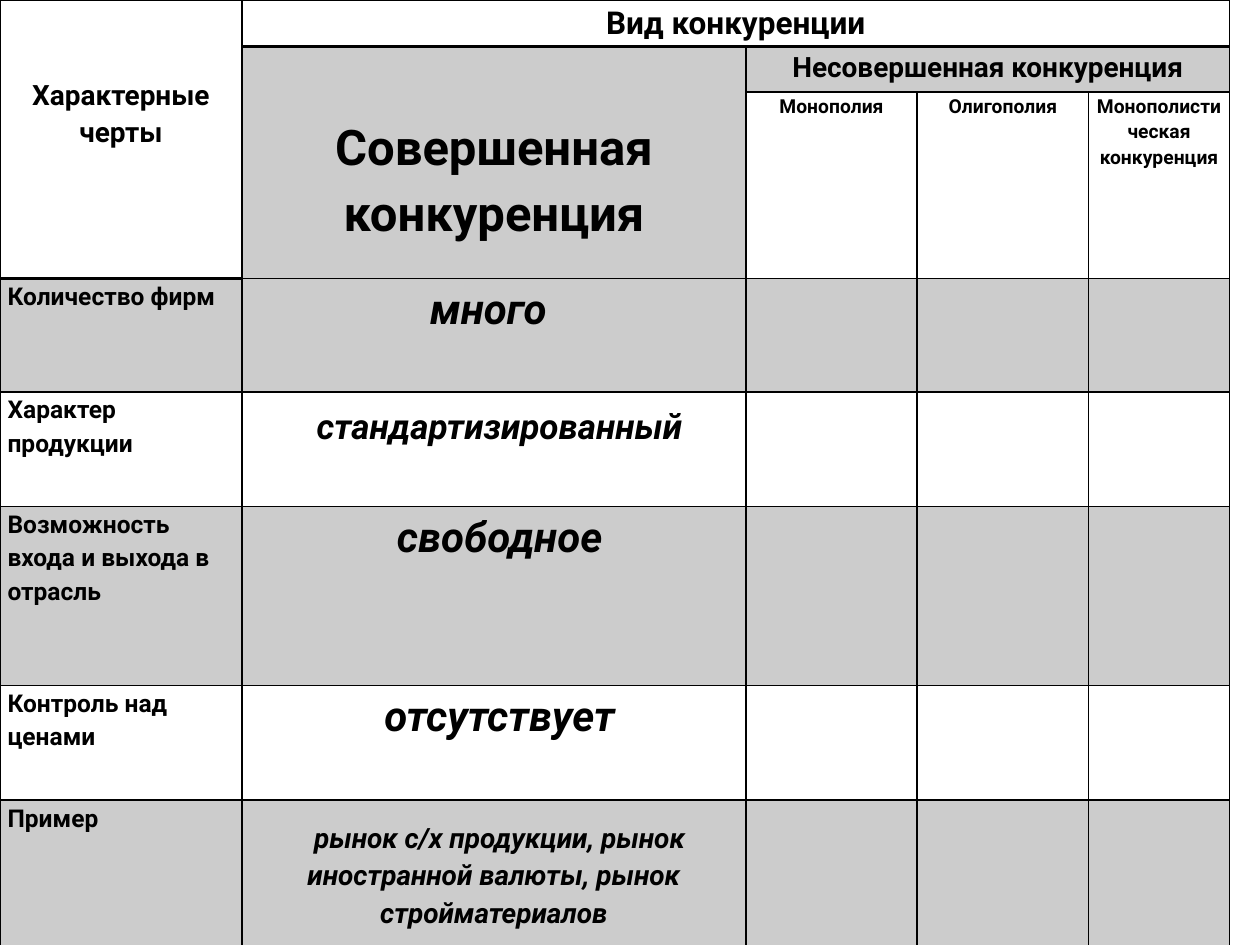
import pptx
import pptx.util
import pptx.dml.color
import pptx.enum.text
import pptx.oxml.ns
from dataclasses import dataclass
from lxml import etree
from pptx.util import Inches, Pt


@dataclass(frozen=True)
class Theme:
    font: str = "Roboto"
    ink: str = "000000"
    shade_alpha: int = 20
    huge: int = 28
    answer: int = 24
    medium: int = 20
    heading: int = 18
    subheading: int = 16
    label: int = 14
    small: int = 11


theme = Theme()
ink = pptx.dml.color.RGBColor.from_string(theme.ink)
align = pptx.enum.text.PP_ALIGN
qn = pptx.oxml.ns.qn


def write(cell, text, size, alignment, italic=False, top=0, offset=None):
    cell.margin_top = Inches(top)
    tf = cell.text_frame
    for i, line in enumerate(text.split("\n")):
        p = tf.paragraphs[0] if i == 0 else tf.add_paragraph()
        p.alignment = alignment
        p.line_spacing = 1.15
        if offset:
            p._p.get_or_add_pPr().set(offset, str(Inches(0.09)))
        r = p.add_run()
        r.text = line
        look = {"name": theme.font, "size": Pt(size), "bold": True, "italic": italic}
        for key, value in look.items():
            setattr(r.font, key, value)
        r.font.color.rgb = ink


def draw_borders(cell, bottom):
    tcPr = cell._tc.get_or_add_tcPr()
    widths = {"lnL": 1, "lnR": 1, "lnT": 1, "lnB": bottom}
    for i, (tag, width) in enumerate(widths.items()):
        ln = etree.Element(qn(f"a:{tag}"), w=str(Pt(width)))
        fill = etree.SubElement(ln, qn("a:solidFill"))
        etree.SubElement(fill, qn("a:srgbClr"), val=theme.ink)
        tcPr.insert(i, ln)


prs = pptx.Presentation()
prs.slide_width, prs.slide_height = Inches(10), Inches(7.5)
s = prs.slides.add_slide(prs.slide_layouts[6])

widths = [1.92, 4, 1.36, 1.36, 1.12]
heights = [0.37, 0.36, 1.48, 0.9, 0.91, 1.42, 0.91, 1.26]
table = s.shapes.add_table(len(heights), len(widths), 0, 0,
                           Inches(sum(widths)), Inches(sum(heights))).table
table.first_row = table.horz_banding = False
for column, width in zip(table.columns, widths):
    column.width = Inches(width)
for row, height in zip(table.rows, heights):
    row.height = Inches(height)

shaded = {(1, c) for c in range(1, 5)} | {(2, 1)}
shaded |= {(r, c) for r in (3, 5, 7) for c in range(5)}
thick = {(0, c) for c in range(5)} | {(2, 0)}
margins = {"margin_left": Inches(0.06), "margin_right": Inches(0.06),
           "margin_top": 0, "margin_bottom": 0}
for r in range(len(heights)):
    for c in range(len(widths)):
        cell = table.cell(r, c)
        for key, value in margins.items():
            setattr(cell, key, value)
        if (r, c) in shaded:
            cell.fill.solid()
            cell.fill.fore_color.rgb = ink
            color = cell._tc.tcPr.find(".//" + qn("a:srgbClr"))
            etree.SubElement(color, qn("a:alpha"), val=str(theme.shade_alpha * 1000))
        else:
            cell.fill.background()
        draw_borders(cell, 2 if (r, c) in thick else 1)

for first, last in [((0, 0), (2, 0)), ((0, 1), (0, 4)), ((1, 1), (2, 1)), ((1, 2), (1, 4))]:
    table.cell(*first).merge(table.cell(*last))

headings = [
    (0, 0, "Характерные\nчерты", theme.subheading, 0.59),
    (0, 1, "Вид конкуренции", theme.heading, 0),
    (1, 1, "Совершенная\nконкуренция", theme.huge, 0.52),
    (1, 2, "Несовершенная конкуренция", theme.subheading, 0),
    (2, 2, "Монополия", theme.small, 0),
    (2, 3, "Олигополия", theme.small, 0),
    (2, 4, "Монополистическая конкуренция", theme.small, 0),
]
for r, c, text, size, top in headings:
    write(table.cell(r, c), text, size, align.CENTER, top=top)

features = [
    ("Количество фирм", "много", theme.answer, 0, "marR"),
    ("Характер продукции", "стандартизированный", theme.medium, 0.07, "indent"),
    ("Возможность входа и выхода в отрасль", "свободное", theme.answer, 0, "indent"),
    ("Контроль над ценами", "отсутствует", theme.answer, 0, "indent"),
    ("Пример", "рынок с/х продукции, рынок иностранной валюты, рынок стройматериалов",
     theme.subheading, 0.14, "indent"),
]
for r, (label, answer, size, top, offset) in enumerate(features, start=3):
    write(table.cell(r, 0), label, theme.label, align.LEFT)
    write(table.cell(r, 1), answer, size, align.CENTER, italic=True, top=top, offset=offset)

prs.save("out.pptx")
